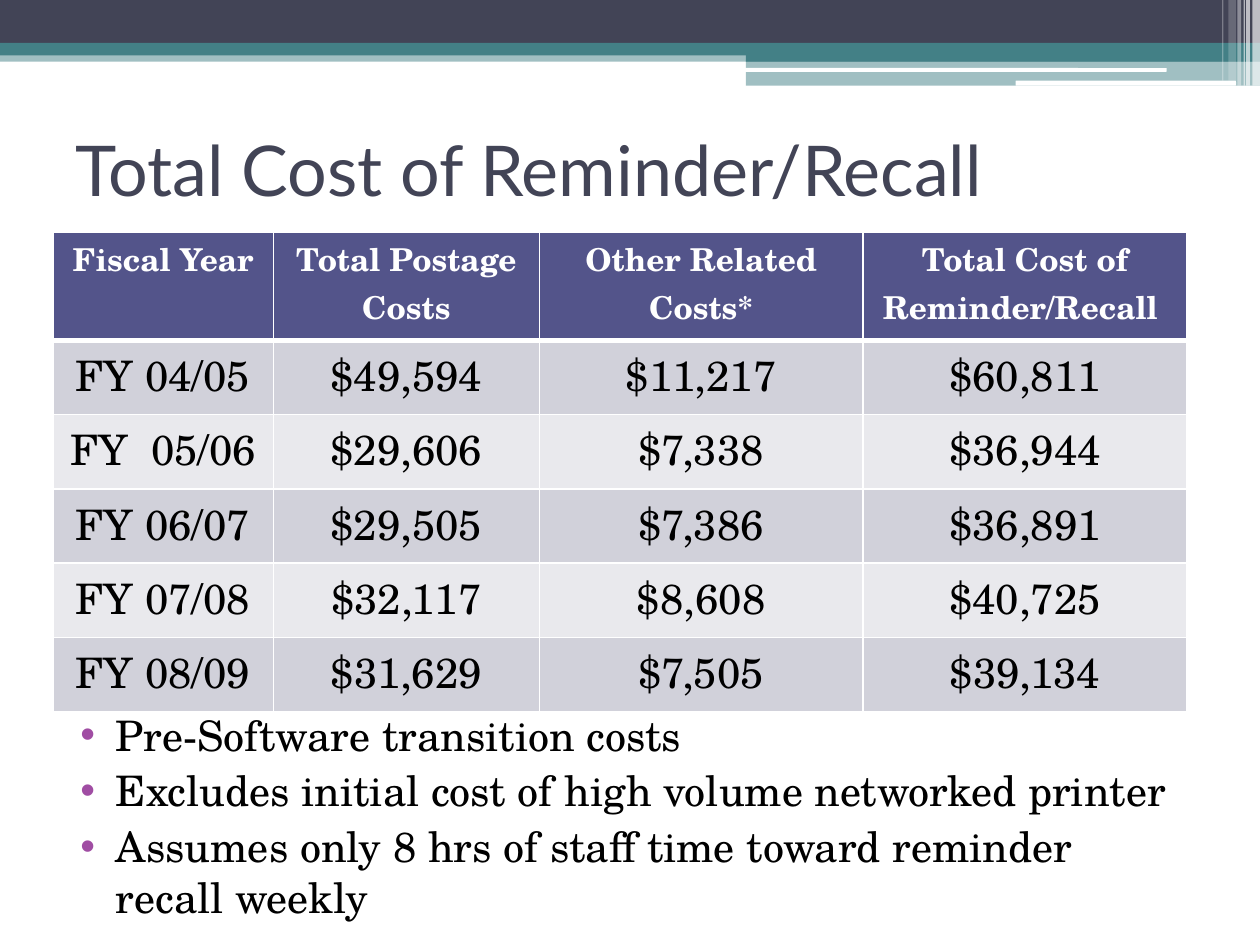
from dataclasses import dataclass

from lxml import etree
from pptx import Presentation
from pptx.dml.color import RGBColor
from pptx.enum.shapes import MSO_SHAPE
from pptx.enum.text import MSO_ANCHOR, PP_ALIGN
from pptx.oxml.ns import qn
from pptx.util import Inches, Pt

RECT, ROUNDED = MSO_SHAPE.RECTANGLE, MSO_SHAPE.ROUNDED_RECTANGLE
CENTER, MIDDLE = PP_ALIGN.CENTER, MSO_ANCHOR.MIDDLE


@dataclass(frozen=True)
class Theme:
    dark: str = "424456"
    teal: str = "438086"
    white: str = "FFFFFF"
    black: str = "000000"
    header: str = "53548A"
    bands: tuple = ("D1D1DA", "E9E9ED")
    bullet: str = "A04DA3"
    title_font: str = "Lato"
    body_font: str = "TeX Gyre Schola"
    title_size: int = 40
    header_size: int = 18
    body_size: int = 24


THEME = Theme()


def style(paragraph, font, size, color, bold=False):
    paragraph.font.name = font
    paragraph.font.size = Pt(size)
    paragraph.font.bold = bold
    paragraph.font.color.rgb = RGBColor.from_string(color)


def add_solid(parent, color, opacity=100):
    """Append a solid fill, for what python-pptx cannot colour itself."""
    fill = etree.SubElement(parent, qn("a:solidFill"))
    value = etree.SubElement(fill, qn("a:srgbClr"), val=color)
    if opacity < 100:
        etree.SubElement(value, qn("a:alpha"), val=str(opacity * 1000))


deck = Presentation()
deck.slide_width, deck.slide_height = Inches(10), Inches(7.5)
page = deck.slides.add_slide(deck.slide_layouts[6])

# Header bands and the fine stripes at the right edge
bands = [
    (RECT, 0, 0.4, 10, 0.09, THEME.teal, 50),
    (RECT, 0, 0, 10, 0.34, THEME.dark, 100),
    (RECT, 0, 0.34, 10, 0.1, THEME.teal, 100),
    (RECT, 5.92, 0.39, 4.08, 0.1, THEME.teal, 100),
    (RECT, 5.92, 0.48, 4.08, 0.2, THEME.teal, 50),
    (ROUNDED, 5.91, 0.54, 3.35, 0.03, THEME.white, 100),
    (ROUNDED, 8.06, 0.64, 1.75, 0.04, THEME.white, 100),
]
stripes = [
    (9.94, 0.06, 0.68, 65),
    (9.89, 0.03, 0.68, 65),
    (9.87, 0.01, 0.68, 60),
    (9.82, 0.03, 0.68, 40),
    (9.75, 0.06, 0.64, 20),
    (9.7, 0.01, 0.64, 30),
]
bands += [(RECT, left, 0, width, height, THEME.white, opacity)
          for left, width, height, opacity in stripes]
for kind, left, top, width, height, color, opacity in bands:
    band = page.shapes.add_shape(
        kind, Inches(left), Inches(top), Inches(width), Inches(height))
    band.shadow.inherit = False
    band.line.fill.background()
    band.fill.solid()
    band.fill.fore_color.rgb = RGBColor.from_string(color)
    if opacity < 100:
        value = band.fill._xPr.find(qn("a:solidFill"))[0]
        etree.SubElement(value, qn("a:alpha"), val=str(opacity * 1000))

# Title
title = page.shapes.add_textbox(Inches(0.5), Inches(0.75), Inches(9), Inches(1.17))
title.text_frame.word_wrap = True
title.text_frame.vertical_anchor = MIDDLE
title.text_frame.text = "Total Cost of Reminder/Recall"
style(title.text_frame.paragraphs[0], THEME.title_font, THEME.title_size, THEME.dark)

# Cost table
costs = [
    ("Fiscal Year", "Total Postage Costs", "Other Related Costs*",
     "Total Cost of Reminder/Recall "),
    ("FY 04/05", "$49,594", "$11,217", "$60,811"),
    ("FY  05/06", "$29,606", "$7,338", "$36,944"),
    ("FY 06/07", "$29,505", "$7,386", "$36,891"),
    ("FY 07/08", "$32,117", "$8,608", "$40,725"),
    ("FY 08/09", "$31,629", "$7,505", "$39,134"),
]
column_widths = (1.75, 2.11, 2.57, 2.57)
header_height, row_height = 0.86, 0.59
table = page.shapes.add_table(
    len(costs), len(column_widths), Inches(0.42), Inches(1.84), Inches(9),
    Inches(header_height + row_height * (len(costs) - 1))).table
for column, width in zip(table.columns, column_widths):
    column.width = Inches(width)

for row_index, values in enumerate(costs):
    is_header = row_index == 0
    table.rows[row_index].height = Inches(header_height if is_header else row_height)
    for column_index, value in enumerate(values):
        cell = table.cell(row_index, column_index)
        cell.text = value
        cell.margin_left = cell.margin_right = cell.margin_bottom = Inches(0.05)
        cell.margin_top = Inches(0.03)
        paragraph = cell.text_frame.paragraphs[0]
        paragraph.alignment = CENTER
        if is_header:
            paragraph.line_spacing = Pt(27.4)
            style(paragraph, THEME.body_font, THEME.header_size, THEME.white, True)
            color = THEME.header
        else:
            paragraph.line_spacing = Pt(35)
            style(paragraph, THEME.body_font, THEME.body_size, THEME.black)
            color = THEME.bands[(row_index - 1) % 2]
        properties = cell._tc.get_or_add_tcPr()
        edges = {"lnL": 1, "lnR": 1, "lnT": 3 if row_index == 1 else 1,
                 "lnB": 3 if is_header else 1}
        for edge, points in edges.items():
            line = etree.SubElement(properties, qn(f"a:{edge}"), w=str(Pt(points)))
            add_solid(line, THEME.white)
        cell.fill.solid()
        cell.fill.fore_color.rgb = RGBColor.from_string(color)

# Notes under the table
remarks = [
    "Pre-Software transition costs",
    "Excludes initial cost of high volume networked printer",
    "Assumes only 8 hrs of staff time toward reminder recall weekly",
]
body = page.shapes.add_textbox(Inches(0.42), Inches(5.58), Inches(9.08), Inches(1.75))
frame = body.text_frame
frame.word_wrap = True
frame.text = "\n".join(remarks)
for paragraph in frame.paragraphs:
    style(paragraph, THEME.body_font, THEME.body_size, THEME.black)
    paragraph.space_before = Pt(3)
    properties = paragraph._p.get_or_add_pPr()
    properties.set("marL", str(Inches(0.4)))
    properties.set("indent", str(Inches(-0.28)))
    bullet_color = etree.Element(qn("a:buClr"))
    etree.SubElement(bullet_color, qn("a:srgbClr"), val=THEME.bullet)
    bullet_font = etree.Element(qn("a:buFont"), typeface="Arial")
    bullet = etree.Element(qn("a:buChar"), char="•")
    defaults = properties.find(qn("a:defRPr"))
    for part in (bullet_color, bullet_font, bullet):
        defaults.addprevious(part)

deck.save("out.pptx")
